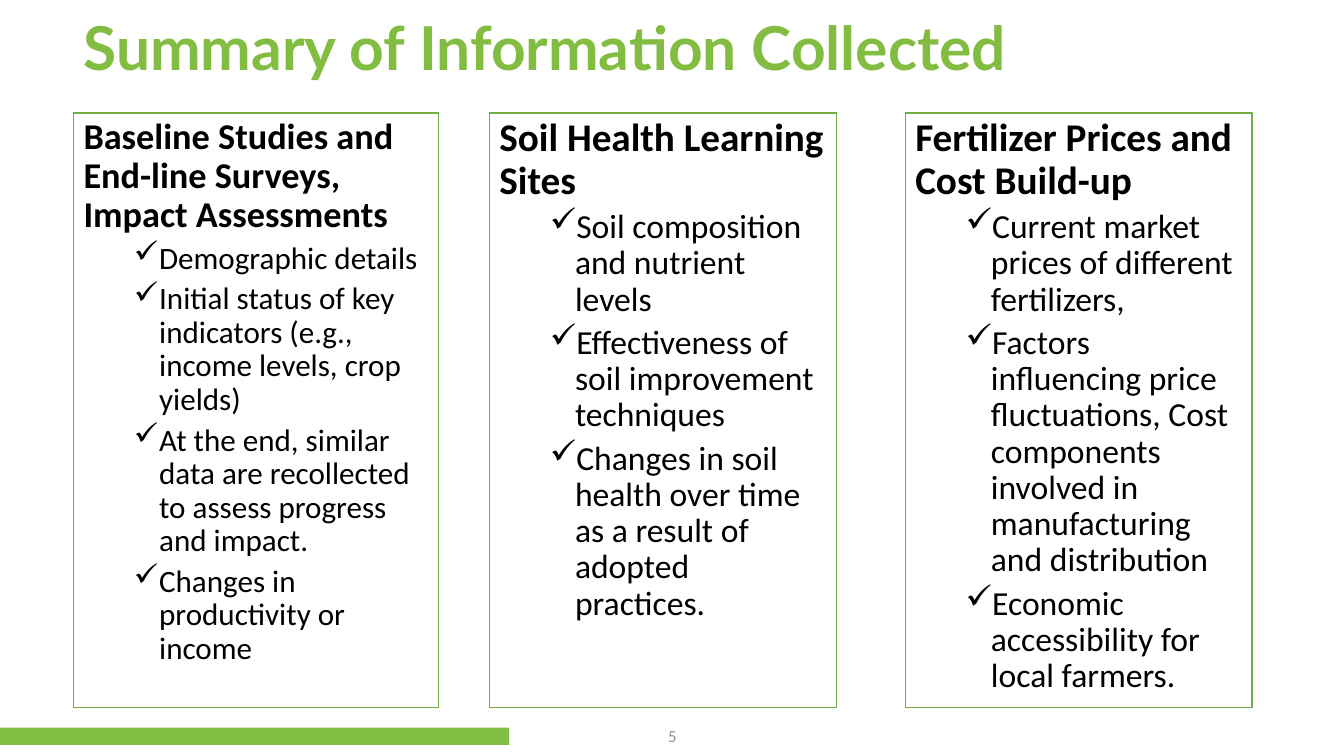
from dataclasses import dataclass

from lxml.etree import SubElement
from pptx import Presentation
from pptx.dml.color import RGBColor
from pptx.enum.shapes import MSO_SHAPE
from pptx.enum.text import MSO_ANCHOR, PP_ALIGN
from pptx.oxml.ns import qn
from pptx.util import Inches, Pt


@dataclass(frozen=True)
class Theme:
    title_font: str = "Lato"
    body_font: str = "Calibri"
    title_color: str = "82BD41"
    bar_color: str = "82BE41"
    border_color: str = "70AD47"
    text_color: str = "000000"
    number_color: str = "8C8C8C"
    panel_color: str = "FFFFFF"
    title_size: float = 43.2
    number_size: float = 12


THEME = Theme()

LEFT = 0.73
COLUMN_PITCH = 4.125
PANEL_TOP, PANEL_HEIGHT = 1.12, 5.9

# heading, bullets, panel width, heading size, bullet size
PANELS = [
    ("Baseline Studies and End-line Surveys, Impact Assessments",
     ["Demographic details",
      "Initial status of key indicators (e.g., income levels, crop yields)",
      "At the end, similar data are recollected to assess progress and impact.",
      "Changes in productivity or income"],
     3.62, 25.9, 22.2),
    ("Soil Health Learning Sites",
     ["Soil composition and nutrient levels",
      "Effectiveness of soil improvement techniques",
      "Changes in soil health over time as a result of adopted practices."],
     3.44, 28, 24),
    ("Fertilizer Prices and Cost Build-up",
     ["Current market prices of different fertilizers,",
      "Factors influencing price fluctuations, Cost components involved in "
      "manufacturing and distribution",
      "Economic accessibility for local farmers."],
     3.44, 28, 24),
]


def add_box(page, box, fill=None, line=None):
    shape = page.shapes.add_shape(MSO_SHAPE.RECTANGLE, *map(Inches, box))
    shape.shadow.inherit = False
    if fill:
        shape.fill.solid()
        shape.fill.fore_color.rgb = RGBColor.from_string(fill)
    else:
        shape.fill.background()
    if line:
        shape.line.color.rgb = RGBColor.from_string(line)
        shape.line.width = Pt(1)
    else:
        shape.line.fill.background()
    return shape


def add_check_bullet(para):
    para.level = 1
    properties = para._p.get_or_add_pPr()
    properties.set("marL", str(Inches(0.75)))
    properties.set("indent", str(Inches(-0.25)))
    SubElement(properties, qn("a:buChar")).set("char", "✓")


def write(para, text, size, color=THEME.text_color, font=THEME.body_font,
          bold=False, align=PP_ALIGN.LEFT, before=0, spacing=1.0, check=False):
    para.alignment = align
    para.line_spacing = spacing
    para.space_before = Pt(before)
    if check:
        add_check_bullet(para)
    span = para.add_run()
    span.text = text
    span.font.name = font
    span.font.size = Pt(size)
    span.font.bold = bold
    span.font.color.rgb = RGBColor.from_string(color)


def add_label(page, box, text, size, **style):
    """Place one line of text, centred vertically in the box."""
    frame = page.shapes.add_textbox(*map(Inches, box)).text_frame
    frame.word_wrap = True
    frame.vertical_anchor = MSO_ANCHOR.MIDDLE
    write(frame.paragraphs[0], text, size, **style)


def add_panel(page, box, heading, bullets, heading_size, bullet_size):
    frame = add_box(page, box, THEME.panel_color, THEME.border_color).text_frame
    frame.word_wrap = True
    frame.vertical_anchor = MSO_ANCHOR.TOP
    write(frame.paragraphs[0], heading, heading_size, bold=True, spacing=0.9)
    for bullet in bullets:
        write(frame.add_paragraph(), bullet, bullet_size,
              before=5, spacing=0.9, check=True)


def add_footer(page):
    add_box(page, (0, 7.22, 5.05, 0.17), THEME.bar_color)
    add_label(page, (5.17, 7.1, 3, 0.4), "5", THEME.number_size,
              color=THEME.number_color, align=PP_ALIGN.CENTER)


def main():
    deck = Presentation()
    deck.slide_width, deck.slide_height = Inches(13.33), Inches(7.5)
    page = deck.slides.add_slide(deck.slide_layouts[6])
    add_footer(page)
    add_label(page, (LEFT, 0.11, 11.69, 0.78), "Summary of Information Collected",
              THEME.title_size, color=THEME.title_color, font=THEME.title_font,
              bold=True, spacing=0.9)
    for column, (heading, bullets, width, *sizes) in enumerate(PANELS):
        box = (LEFT + column * COLUMN_PITCH, PANEL_TOP, width, PANEL_HEIGHT)
        add_panel(page, box, heading, bullets, *sizes)
    deck.save("out.pptx")


if __name__ == "__main__":
    main()
